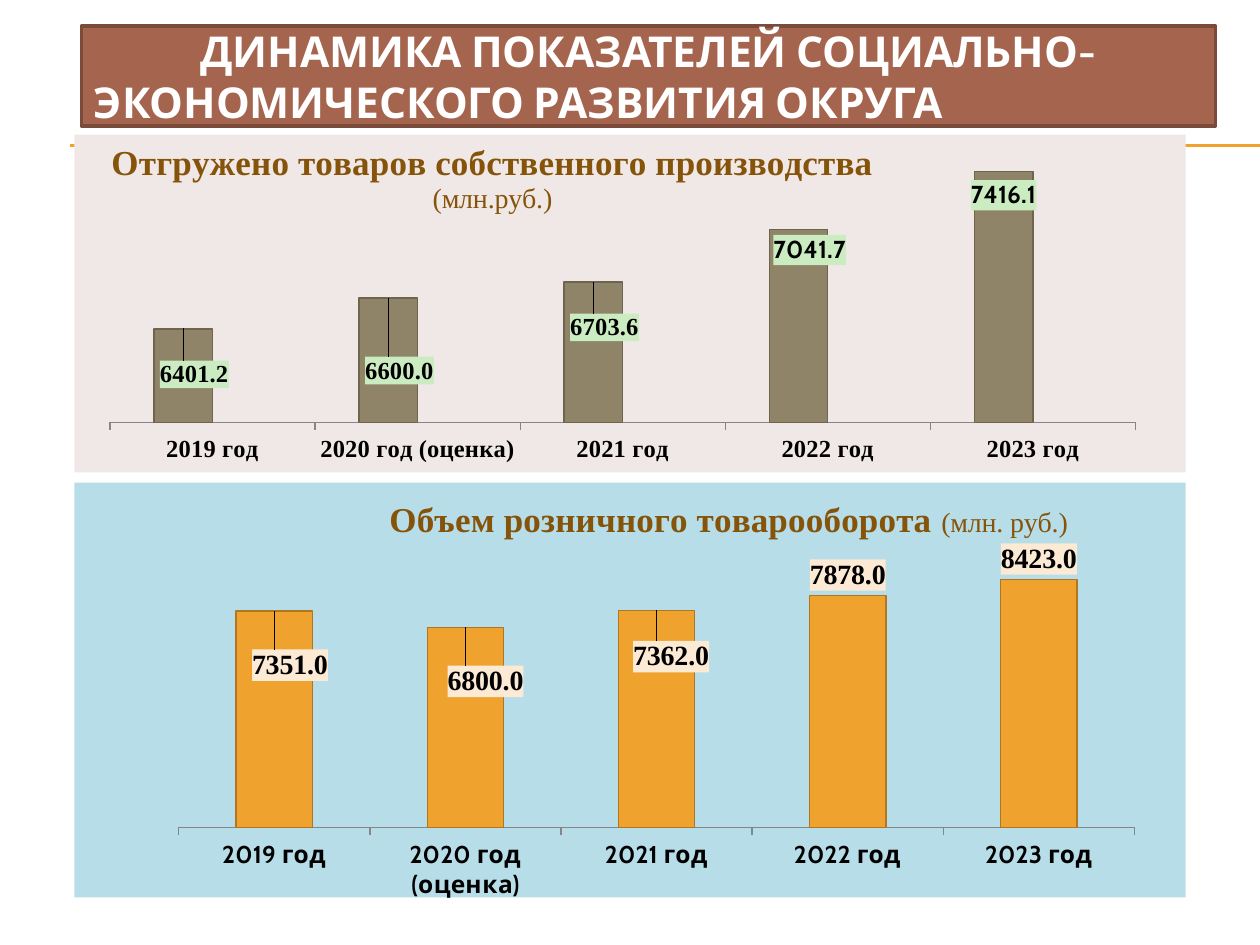
"""Build a slide with two column charts of district economic indicators."""
import pptx
import pptx.chart.data
import pptx.dml.color
import pptx.enum.chart
import pptx.enum.shapes
import pptx.enum.text
import pptx.oxml
import pptx.oxml.ns
import pptx.util

Pt = pptx.util.Pt
RGBColor = pptx.dml.color.RGBColor
qn = pptx.oxml.ns.qn
ALIGN = pptx.enum.text.PP_ALIGN

WHITE = RGBColor(0xFF, 0xFF, 0xFF)
BLACK = RGBColor(0, 0, 0)
ORANGE = RGBColor(0xF0, 0xA2, 0x2E)
DARK_ORANGE = RGBColor(0xB0, 0x76, 0x20)
BROWN = RGBColor(0xA5, 0x64, 0x4E)
DARK_BROWN = RGBColor(0x7A, 0x4A, 0x3A)
TITLE_BROWN = RGBColor(0x85, 0x54, 0x0A)
OLIVE = RGBColor(0x8F, 0x84, 0x68)
DARK_OLIVE = RGBColor(0x6E, 0x65, 0x4E)
PINK = RGBColor(0xF0, 0xE8, 0xE6)
BLUE = RGBColor(0xB7, 0xDE, 0xE8)
GREEN = RGBColor(0xCB, 0xEB, 0xC1)
CREAM = RGBColor(0xFC, 0xEA, 0xD5)
GRAY = RGBColor(0x86, 0x86, 0x86)

SERIF = "Times New Roman"
SANS = "Cabin"
YEARS = ["2019 год", "2020 год (оценка)", "2021 год", "2022 год", "2023 год"]


def chart_xml(tag, inner="", attributes=""):
    return pptx.oxml.parse_xml(
        f'<c:{tag} {pptx.oxml.ns.nsdecls("c", "a")} {attributes}>{inner}</c:{tag}>')


def set_layout(parent, index, target="", **fractions):
    for old in parent.findall(qn("c:layout")):
        parent.remove(old)
    inner = f'<c:layoutTarget val="{target}"/>' if target else ""
    if "w" in fractions:
        inner += '<c:xMode val="edge"/><c:yMode val="edge"/>'
    elif parent.tag == qn("c:title"):
        inner += '<c:xMode val="edge"/><c:yMode val="edge"/>'
    inner += "".join(f'<c:{key} val="{value}"/>' for key, value in fractions.items())
    parent.insert(index, chart_xml("layout", f"<c:manualLayout>{inner}</c:manualLayout>"))


prs = pptx.Presentation()
prs.slide_width, prs.slide_height = Pt(720), Pt(540)
slide = prs.slides.add_slide(prs.slide_layouts[6])

for rule_y in (82.8, 83.5):
    rule = slide.shapes.add_connector(
        pptx.enum.shapes.MSO_CONNECTOR.STRAIGHT, Pt(40.3), Pt(rule_y), Pt(720), Pt(rule_y))
    rule.line.color.rgb = ORANGE
    rule.line.width = Pt(0.75)
    rule._element.spPr.append(
        pptx.oxml.parse_xml(f'<a:effectLst {pptx.oxml.ns.nsdecls("a")}/>'))

heading = slide.shapes.add_shape(
    pptx.enum.shapes.MSO_SHAPE.RECTANGLE, Pt(46.6), Pt(15), Pt(648), Pt(56.9))
heading.shadow.inherit = False
heading.fill.solid()
heading.fill.fore_color.rgb = BROWN
heading.line.color.rgb = DARK_BROWN
heading.line.width = Pt(2)
heading.text_frame.word_wrap = True
heading.text_frame.vertical_anchor = pptx.enum.text.MSO_ANCHOR.MIDDLE
heading.text_frame.text = "ДИНАМИКА ПОКАЗАТЕЛЕЙ СОЦИАЛЬНО-\nЭКОНОМИЧЕСКОГО РАЗВИТИЯ ОКРУГА"
for paragraph, alignment in zip(heading.text_frame.paragraphs, (ALIGN.CENTER, ALIGN.LEFT)):
    paragraph.alignment = alignment
    paragraph.font.name = SANS
    paragraph.font.size = Pt(24.3)
    paragraph.font.bold = True
    paragraph.font.color.rgb = WHITE

retail = dict(
    top=275.8, height=238.3, back=BLUE, bar=ORANGE, edge=DARK_ORANGE,
    series=[("Розничный товарооборот", [7351, 6800, 7362, 7878, 8423])],
    scale=(0, 9000), plot=dict(x=0.094, y=0.193, w=0.86, h=0.638), axis_font=SANS,
    title=[[("Объем розничного товарооборота ", 20), ("(млн. руб.)", 16)]],
    title_at=dict(x=0.28, y=0.03), label_size=16, label_back=CREAM,
    label_fonts=[SERIF] * 5,
    offsets=[(0.014, 0.18), (0.018, 0.18), (0.013, 0.16), (0, 0), (0, 0)])
shipped = dict(
    top=77, height=193, back=PINK, bar=OLIVE, edge=DARK_OLIVE,
    series=[("Отгружено товаров", [6401.2, 6600, 6703.6, 7041.7, 7416.1]),
            ("Ряд 2", [None] * 5)],
    scale=(5800, 7600), plot=dict(x=0.032, y=0.024, w=0.923, h=0.828), axis_font=SERIF,
    title=[[("Отгружено товаров собственного производства", 20)], [("(млн.руб.)", 16)]],
    title_at=dict(x=0.03, y=0.01), label_size=14, label_back=GREEN,
    label_fonts=[SERIF] * 3 + [SANS] * 2,
    offsets=[(0.01, 0.19), (0.01, 0.27), (0.01, 0.19), (0.01, 0.12), (0, 0.13)])

for panel in (retail, shipped):
    chart_data = pptx.chart.data.CategoryChartData(number_format="0.0")
    chart_data.categories = YEARS
    for name, values in panel["series"]:
        chart_data.add_series(name, values)
    chart = slide.shapes.add_chart(
        pptx.enum.chart.XL_CHART_TYPE.COLUMN_CLUSTERED, Pt(42.5), Pt(panel["top"]),
        Pt(635), Pt(panel["height"]), chart_data).chart
    chart.has_legend = False
    chart.font.name = SANS
    chart.font.size = Pt(10)
    chart.font.color.rgb = BLACK
    chart_part = chart._chartSpace.find(qn("c:chart"))
    chart_part.addnext(chart_xml(
        "spPr", f'<a:solidFill><a:srgbClr val="{panel["back"]}"/></a:solidFill>'
                '<a:ln><a:noFill/></a:ln>'))

    title_frame = chart.chart_title.text_frame
    for number, line in enumerate(panel["title"]):
        paragraph = title_frame.add_paragraph() if number else title_frame.paragraphs[0]
        paragraph.alignment = ALIGN.CENTER
        for text, size in line:
            run = paragraph.add_run()
            run.text = text
            run.font.name = SERIF
            run.font.size = Pt(size)
            run.font.bold = size == 20
            run.font.color.rgb = TITLE_BROWN
    set_layout(chart_part.find(qn("c:title")), 1, **panel["title_at"])
    set_layout(chart_part.find(qn("c:plotArea")), 0, "inner", **panel["plot"])

    years = chart.category_axis
    years.tick_labels.font.name = panel["axis_font"]
    years.tick_labels.font.size = Pt(14)
    years.tick_labels.font.bold = True
    years.format.line.color.rgb = GRAY
    amounts = chart.value_axis
    amounts.visible = False
    amounts.has_major_gridlines = False
    amounts.minimum_scale, amounts.maximum_scale = panel["scale"]

    columns = chart.plots[0]
    columns.gap_width = 150
    columns.overlap = 0
    columns.vary_by_categories = False
    bars = columns.series[0]
    bars.format.fill.solid()
    bars.format.fill.fore_color.rgb = panel["bar"]
    bars.format.line.color.rgb = panel["edge"]
    bars.format.line.width = Pt(0.75)
    for index, (font_name, (dx, dy)) in enumerate(zip(panel["label_fonts"], panel["offsets"])):
        label = bars.points[index].data_label
        label.font.name = font_name
        label.font.size = Pt(panel["label_size"])
        label.font.bold = True
        label.font.color.rgb = BLACK
        label.position = pptx.enum.chart.XL_LABEL_POSITION.OUTSIDE_END
        label_part = bars._element.findall(".//" + qn("c:dLbl"))[index]
        for old in label_part.findall(qn("c:spPr")):
            label_part.remove(old)
        set_layout(label_part, 1, x=dx, y=dy)
        label_part.insert(2, chart_xml("numFmt", "", 'formatCode="0.0" sourceLinked="0"'))
        label_part.insert(3, chart_xml(
            "spPr", f'<a:solidFill><a:srgbClr val="{panel["label_back"]}"/></a:solidFill>'))

prs.save("out.pptx")
